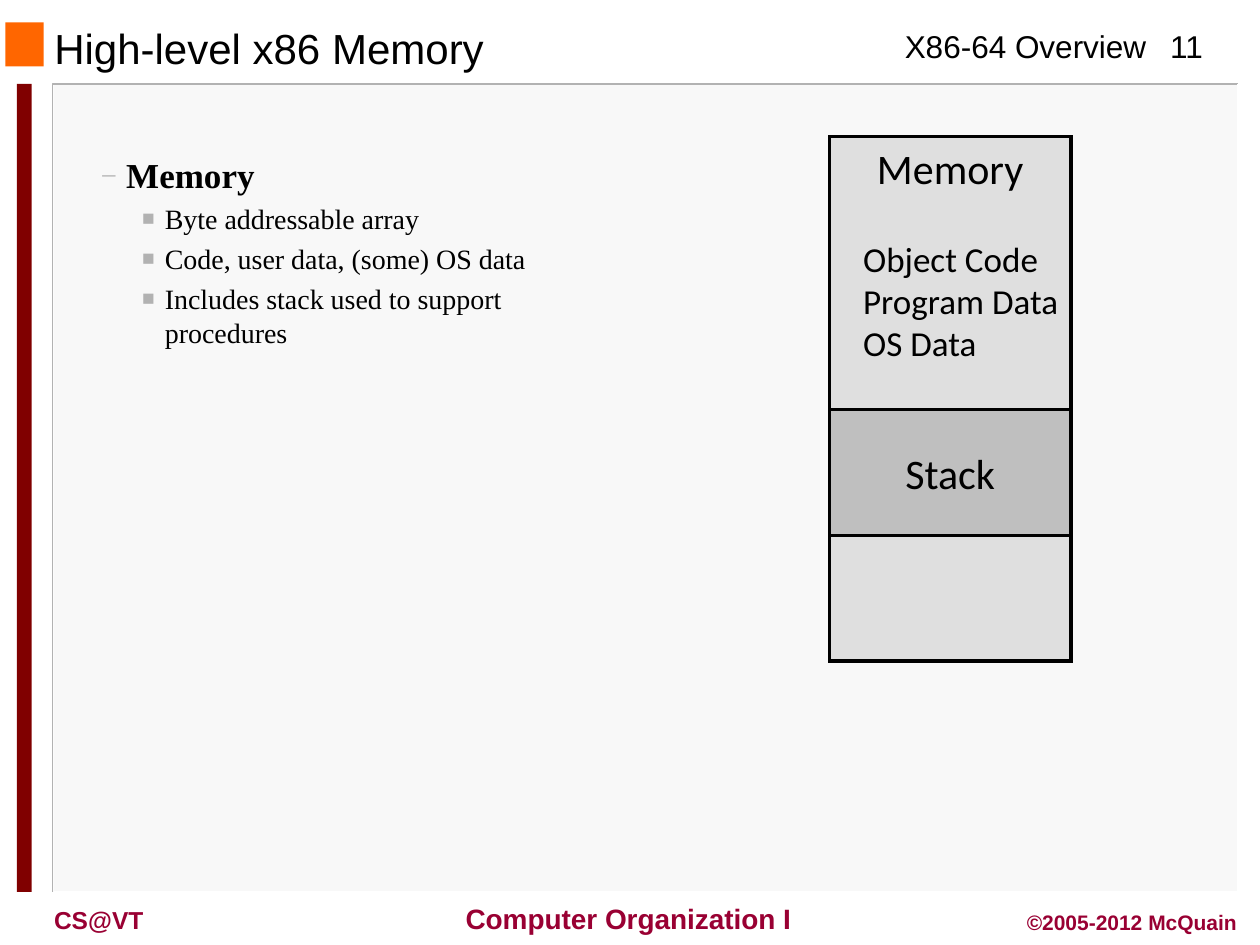
from dataclasses import dataclass

from lxml.etree import SubElement
from pptx import Presentation
from pptx.dml.color import RGBColor
from pptx.enum.shapes import MSO_SHAPE
from pptx.enum.text import MSO_ANCHOR, MSO_AUTO_SIZE, PP_ALIGN
from pptx.oxml.ns import qn
from pptx.util import Cm, Pt

BLACK = "000000"
CRIMSON = "990033"
SILVER = "B2B2B2"


@dataclass
class Area:
    left: float
    top: float
    width: float
    height: float

    def lengths(self):
        return Cm(self.left), Cm(self.top), Cm(self.width), Cm(self.height)


@dataclass
class Type:
    size: float
    name: str = "Arial"
    color: str = BLACK
    bold: bool = False
    align: PP_ALIGN = PP_ALIGN.LEFT


@dataclass
class Label:
    area: Area
    lines: list[str]
    type: Type
    wrap: bool = True


@dataclass
class Block:
    area: Area
    fill: str
    outlined: bool = False
    text: str = ""
    anchor: MSO_ANCHOR = MSO_ANCHOR.TOP


@dataclass
class Bullet:
    text: str
    level: int
    symbol: str
    margin: float
    hanging: float
    space: float
    type: Type


def rgb(color: str) -> RGBColor:
    return RGBColor.from_string(color)


def style(para, type: Type) -> None:
    para.alignment = type.align
    font = para.font
    font.name, font.size, font.bold = type.name, Pt(type.size), type.bold
    font.color.rgb = rgb(type.color)


def write(frame, lines: list[str], type: Type) -> None:
    frame.text = "\n".join(lines)
    for para in frame.paragraphs:
        style(para, type)


def place_in_front(page, shape, area: Area) -> None:
    shape.left, shape.top, shape.width, shape.height = area.lengths()
    page.shapes._spTree.append(shape._element)


def draw_label(page, label: Label) -> None:
    box = page.shapes.add_textbox(*label.area.lengths())
    box.text_frame.word_wrap = label.wrap
    write(box.text_frame, label.lines, label.type)


def draw_block(page, block: Block) -> None:
    box = page.shapes.add_shape(MSO_SHAPE.RECTANGLE, *block.area.lengths())
    box.shadow.inherit = False
    box.fill.solid()
    box.fill.fore_color.rgb = rgb(block.fill)
    if block.outlined:
        box.line.color.rgb = rgb(BLACK)
        box.line.width = Pt(2)
        SubElement(box.line._get_or_add_ln(), qn("a:miter"), lim="800000")
    else:
        box.line.fill.background()
    if block.text:
        box.text_frame.word_wrap = False
        box.text_frame.vertical_anchor = block.anchor
        write(box.text_frame, [block.text], Type(24, "Calibri", align=PP_ALIGN.CENTER))


def draw_edge(page, points: list[tuple[float, float]], color: str) -> None:
    start, *rest = [(Cm(x), Cm(y)) for x, y in points]
    builder = page.shapes.build_freeform(*start)
    builder.add_line_segments(rest, close=False)
    edge = builder.convert_to_shape()
    edge.shadow.inherit = False
    edge.fill.background()
    edge.line.color.rgb = rgb(color)
    edge.line.width = Pt(1)


def format_bullet(para, bullet: Bullet) -> None:
    para.text = bullet.text
    para.level = bullet.level
    para.space_before = Pt(bullet.space)
    properties = para._p.get_or_add_pPr()
    properties.set("marL", str(Cm(bullet.margin)))
    properties.set("indent", str(-Cm(bullet.hanging)))
    color = SubElement(properties, qn("a:buClr"))
    SubElement(color, qn("a:srgbClr"), val=SILVER)
    SubElement(properties, qn("a:buSzPct"), val="75000")
    SubElement(properties, qn("a:buFont"), typeface="Times New Roman")
    SubElement(properties, qn("a:buChar"), char=bullet.symbol)
    style(para, bullet.type)


def draw_title(page, text: str) -> None:
    title = page.shapes.title
    place_in_front(page, title, Area(0.84, 0.48, 16.08, 0.97))
    title.text_frame.auto_size = MSO_AUTO_SIZE.NONE
    title.text_frame.vertical_anchor = MSO_ANCHOR.MIDDLE
    write(title.text_frame, [text], Type(24))


def draw_list(page, bullets: list[Bullet]) -> None:
    body = page.placeholders[1]
    place_in_front(page, body, Area(1.48, 2.96, 11.33, 4.37))
    frame = body.text_frame
    frame.auto_size = MSO_AUTO_SIZE.NONE
    frame.vertical_anchor = MSO_ANCHOR.TOP
    for index, bullet in enumerate(bullets):
        para = frame.add_paragraph() if index else frame.paragraphs[0]
        format_bullet(para, bullet)


def main() -> None:
    deck = Presentation()
    deck.slide_width, deck.slide_height = Cm(25.4), Cm(19.05)
    page = deck.slides.add_slide(deck.slide_layouts[1])

    left, top, right, bottom = 1.08, 1.69, 24.95, 17.98
    draw_block(page, Block(Area(left, top, right - left, bottom - top), "F8F8F8"))
    draw_edge(page, [(right, top), (left - 0.02, top), (left - 0.02, bottom)], SILVER)
    draw_edge(page, [(right, top), (right, bottom), (left, bottom)], "FFFFFF")
    draw_block(page, Block(Area(0.11, 0.45, 0.77, 0.89), "FF6600"))
    draw_block(page, Block(Area(0.34, top, 0.3, bottom - top), "800000"))

    labels = [
        Label(Area(17.99, 0.43, 5.46, 1.02), ["X86-64 Overview"], Type(18), False),
        Label(Area(23.07, 0.43, 1.7, 1.02), ["11"], Type(18, align=PP_ALIGN.CENTER)),
        Label(Area(0.84, 18.12, 3.81, 0.84), ["CS@VT"], Type(14, color=CRIMSON, bold=True)),
        Label(Area(8.97, 18.05, 7.4, 0.94), ["Computer Organization I"],
              Type(16, color=CRIMSON, bold=True, align=PP_ALIGN.CENTER), False),
        Label(Area(19.91, 18.21, 5.28, 0.76), ["©2005-2012 McQuain"],
              Type(12, color=CRIMSON, bold=True, align=PP_ALIGN.RIGHT)),
    ]
    for label in labels:
        draw_label(page, label)

    draw_title(page, "High-level x86 Memory")

    memory = Area(16.72, 2.75, 4.87, 10.58)
    stack = Area(memory.left, 8.26, memory.width, 2.54)
    draw_block(page, Block(memory, "DFDFDF", True, "Memory"))
    draw_label(page, Label(Area(17.15, 4.66, 4.87, 2.82),
                           ["Object Code", "Program Data", "OS Data"], Type(20, "Calibri")))
    draw_block(page, Block(stack, "BFBFBF", True, "Stack", MSO_ANCHOR.MIDDLE))

    details = ["Byte addressable array", "Code, user data, (some) OS data",
               "Includes stack used to support procedures"]
    heading = Bullet("Memory", 1, "–", 0.81, 0.48, 0, Type(20, "Times New Roman", bold=True))
    draw_list(page, [heading] + [
        Bullet(text, 2, "■", 1.59, 0.46, 3.7, Type(16, "Times New Roman")) for text in details
    ])

    deck.save("out.pptx")


if __name__ == "__main__":
    main()
